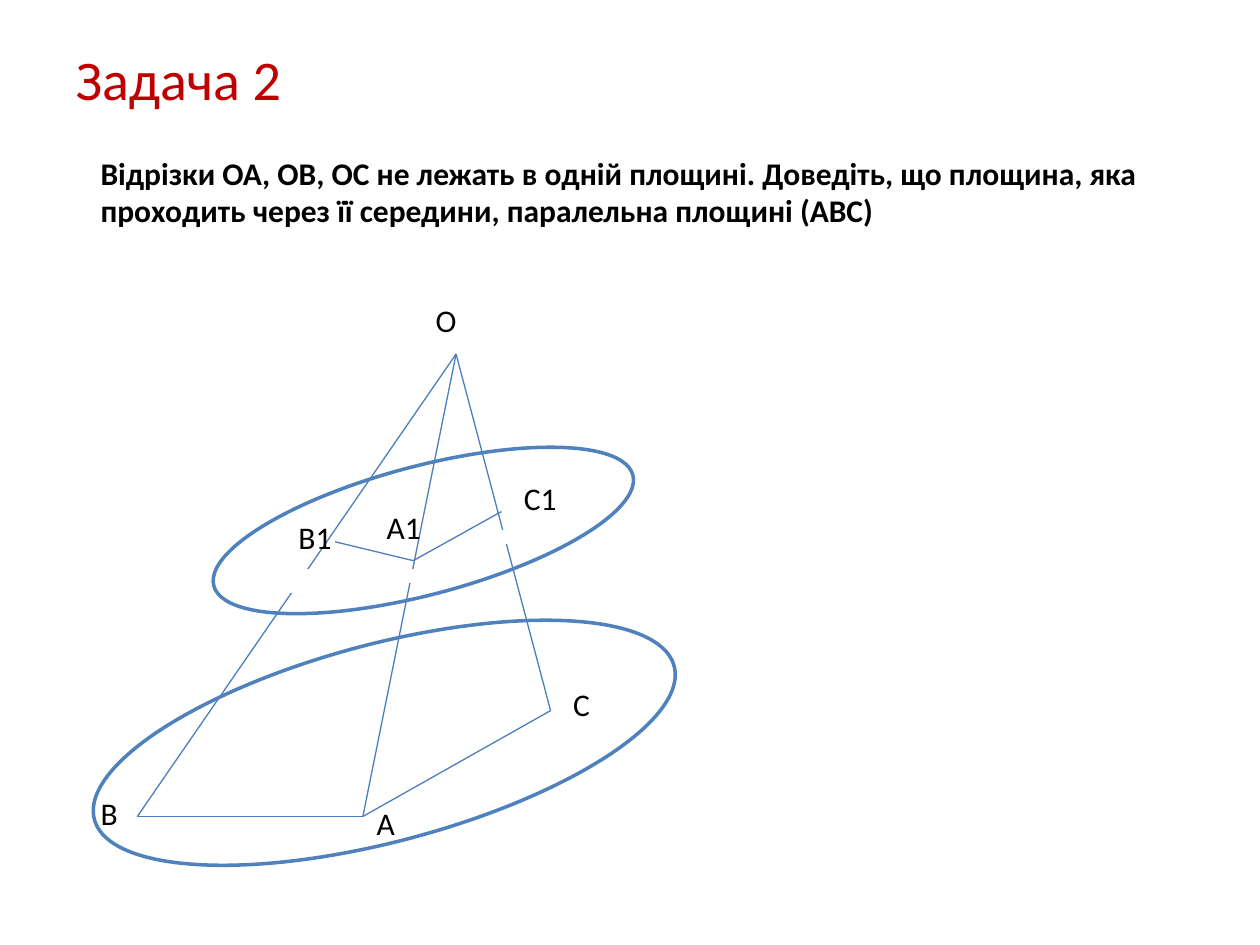
from dataclasses import dataclass

import pptx
import pptx.dml.color
import pptx.enum.shapes
import pptx.enum.text
import pptx.oxml.ns
import pptx.util
from lxml import etree
from pptx.util import Inches


@dataclass(frozen=True)
class Theme:
    font: str = "Calibri"
    title_size: int = 32
    text_size: int = 18
    title: str = "C00000"
    text: str = "000000"
    edge: str = "4B7EBC"
    plane: str = "4F81BD"
    paper: str = "FFFFFF"
    edge_width: float = 0.75
    plane_width: float = 2


THEME = Theme()

POINTS = {
    "О": (2.95, 0.47), "А": (2.21, 4.14), "В": (0.42, 4.14), "С": (3.7, 3.3),
    "А1": (2.61, 2.11), "В1": (1.99, 1.96), "С1": (3.31, 1.72),
}
PYRAMID_EDGES = [("В", "О"), ("О", "А"), ("О", "С"), ("В", "А"), ("А", "С")]
SECTION_EDGES = [("В1", "А1"), ("А1", "С1")]
PLANES = [(0.97, 1.36, 3.44, 1.02), (0, 2.77, 4.76, 1.57)]
PLANE_ROTATION = 345.2
LABELS = {
    "С1": (3.39, 1.41, 0.47), "О": (2.69, 0, 0.47), "А1": (2.3, 1.64, 0.78),
    "В1": (1.6, 1.72, 0.78), "В": (0.03, 3.91, 0.78),
    "А": (2.22, 3.99, 0.78), "С": (3.78, 3.05, 0.47),
}
LABEL_HEIGHT = 0.4
GAPS = [(1.52, 2.27), (1.6, 2.19), (3.24, 1.88), (2.45, 2.19)]
GAP_SIZE = (0.23, 0.08)


def color(value):
    return pptx.dml.color.RGBColor.from_string(value)


def apply_format(target, values):
    for name, value in values.items():
        setattr(target, name, value)


def write_text(box, text, size, ink, bold=False):
    frame = box.text_frame
    frame.word_wrap = True
    para = frame.paragraphs[0]
    para.alignment = pptx.enum.text.PP_ALIGN.LEFT
    span = para.add_run()
    span.text = text
    apply_format(span.font, {"name": THEME.font, "size": pptx.util.Pt(size), "bold": bold})
    span.font.color.rgb = color(ink)


def add_text(page, area, text, bold=False):
    box = page.shapes.add_textbox(*map(Inches, area))
    write_text(box, text, THEME.text_size, THEME.text, bold)
    box.text_frame.auto_size = pptx.enum.text.MSO_AUTO_SIZE.SHAPE_TO_FIT_TEXT


def add_title(page, area, text):
    title = page.shapes.title
    apply_format(title, dict(zip(("left", "top", "width", "height"), map(Inches, area))))
    title.text_frame.vertical_anchor = pptx.enum.text.MSO_ANCHOR.MIDDLE
    write_text(title, text, THEME.title_size, THEME.title)


def add_edges(shapes, left, top, edges):
    for names in edges:
        ends = [Inches(value) for name in names
                for value in (left + POINTS[name][0], top + POINTS[name][1])]
        edge = shapes.add_connector(pptx.enum.shapes.MSO_CONNECTOR.STRAIGHT, *ends)
        edge.line.color.rgb = color(THEME.edge)
        edge.line.width = pptx.util.Pt(THEME.edge_width)
        properties = edge.element.find(pptx.oxml.ns.qn("p:spPr"))
        etree.SubElement(properties, pptx.oxml.ns.qn("a:effectLst"))


def add_outlined(page, kind, area, line, fill=None):
    shape = page.shapes.add_shape(kind, *map(Inches, area))
    shape.shadow.inherit = False
    if fill:
        shape.fill.solid()
        shape.fill.fore_color.rgb = color(fill)
    else:
        shape.fill.background()
    shape.line.color.rgb = color(line)
    shape.line.width = pptx.util.Pt(THEME.plane_width)
    return shape


def add_figure(page, left, top):
    kinds = pptx.enum.shapes.MSO_SHAPE
    add_edges(page.shapes.add_group_shape().shapes, left, top, PYRAMID_EDGES)
    add_edges(page.shapes, left, top, SECTION_EDGES)
    for x, y, width, height in PLANES:
        plane = add_outlined(page, kinds.OVAL, (left + x, top + y, width, height), THEME.plane)
        plane.rotation = PLANE_ROTATION
    for name, (x, y, width) in LABELS.items():
        add_text(page, (left + x, top + y, width, LABEL_HEIGHT), name)
    for x, y in GAPS:
        add_outlined(page, kinds.RECTANGLE, (left + x, top + y, *GAP_SIZE),
                     THEME.paper, THEME.paper)


def main():
    deck = pptx.Presentation()
    apply_format(deck, {"slide_width": Inches(10), "slide_height": Inches(7.5)})
    page = deck.slides.add_slide(deck.slide_layouts[5])
    add_title(page, (0.5, 0.3, 9, 0.64), "Задача 2")
    add_text(page, (0.7, 1.17, 8.67, 1.01),
             "Відрізки ОА, ОВ, ОС не лежать в одній площині. Доведіть, що площина, "
             "яка проходить через її середини, паралельна площині (АВС)", bold=True)
    add_figure(page, 0.67, 2.34)
    deck.save("out.pptx")


if __name__ == "__main__":
    main()
